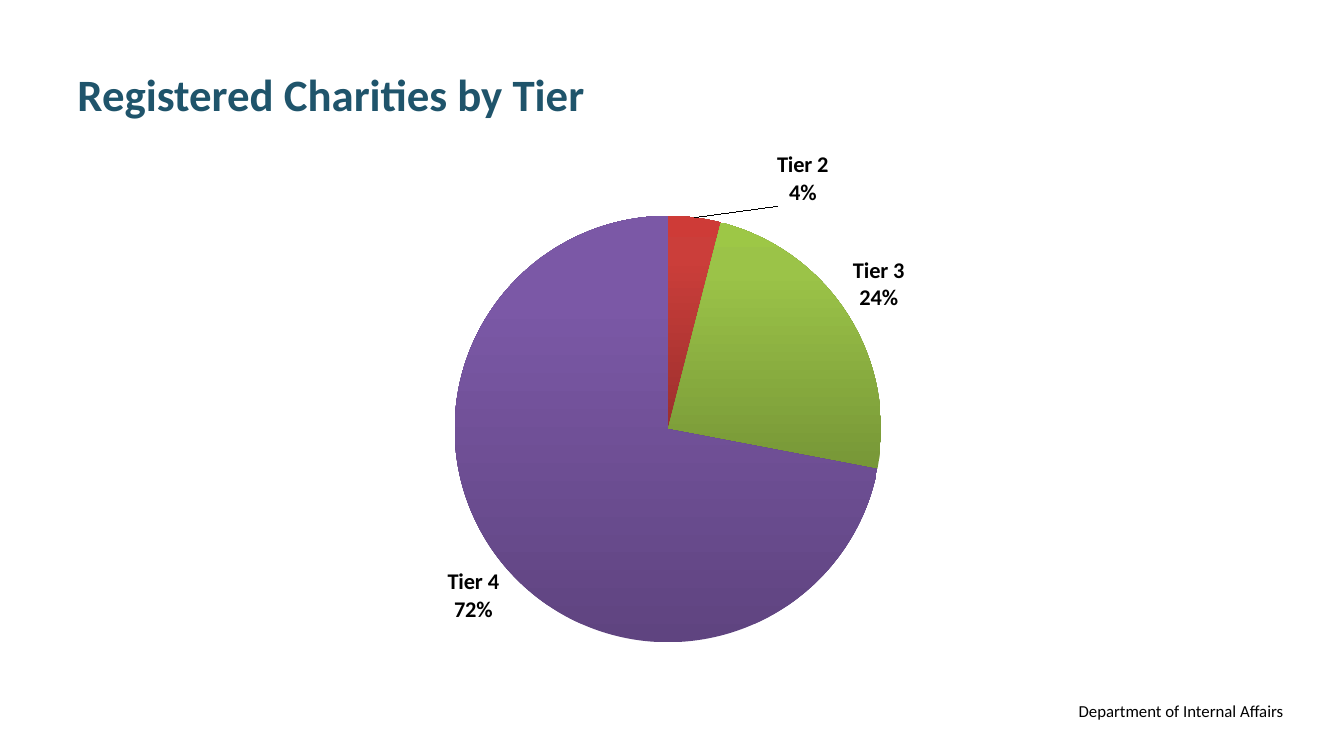
from copy import deepcopy

from pptx import Presentation
from pptx.chart.data import CategoryChartData
from pptx.dml.color import RGBColor
from pptx.enum.chart import XL_CHART_TYPE, XL_LABEL_POSITION
from pptx.enum.text import MSO_ANCHOR, PP_ALIGN
from pptx.oxml import parse_xml
from pptx.oxml.ns import nsdecls
from pptx.util import Inches, Pt

PIE = XL_CHART_TYPE.PIE
OUTSIDE_END = XL_LABEL_POSITION.OUTSIDE_END
MIDDLE = MSO_ANCHOR.MIDDLE
LEFT, RIGHT = PP_ALIGN.LEFT, PP_ALIGN.RIGHT
FONT = "Calibri"


def color(value):
    return RGBColor.from_string(value)


def chart_layout(**values):
    items = "".join(f'<c:{k} val="{v}"/>' for k, v in values.items())
    return parse_xml(f'<c:layout {nsdecls("c")}><c:manualLayout>{items}'
                     '</c:manualLayout></c:layout>')


prs = Presentation()
prs.slide_width, prs.slide_height = Inches(13.33), Inches(7.5)
s = prs.slides.add_slide(prs.slide_layouts[6])

# Title and footer
texts = [
    ("Registered Charities by Tier", (0.67, 0.3, 12, 1.25), LEFT, MIDDLE,
     {"size": Pt(32), "bold": True}, "1F546B"),
    ("Department of Internal Affairs", (8.42, 6.9, 4.41, 0.4), RIGHT, MSO_ANCHOR.TOP,
     {"size": Pt(12)}, "000000"),
]
for text, box, align, anchor, style, ink in texts:
    tf = s.shapes.add_textbox(*map(Inches, box)).text_frame
    tf.word_wrap = True
    tf.vertical_anchor = anchor
    p = tf.paragraphs[0]
    p.alignment = align
    r = p.add_run()
    r.text = text
    r.font.name = FONT
    r.font.color.rgb = color(ink)
    for name, value in style.items():
        setattr(r.font, name, value)

# Pie chart
data = CategoryChartData()
data.categories = ["Tier 1", "Tier 2", "Tier 3", "Tier 4"]
data.add_series("Series 1", [0, 4, 24, 72])
box = map(Inches, (2.17, 1.39, 9, 5.31))
chart = s.shapes.add_chart(PIE, *box, data).chart
chart.has_legend = False
chart.has_title = False
chart.font.name = FONT
chart.font.size = Pt(10)
chart.font.color.rgb = color("000000")
plot = chart.plots[0]
plot.vary_by_categories = True
series = plot.series[0]

# Pie circle within the chart frame
area = chart._chartSpace.chart.plotArea
for old in area.findall("c:layout", area.nsmap):
    area.remove(old)
area.insert(0, chart_layout(layoutTarget="inner", xMode="edge", yMode="edge",
                            x=0.26, y=0.14, w=0.47, h=0.8))

# Slice gradients, dark at the bottom
gradients = [
    ("2F5F99", "3D7CC7", "3A7CCB"),
    ("9C2F2D", "CB3E3A", "CE3B37"),
    ("779737", "9BC348", "9DC746"),
    ("5F4480", "7B58A6", "7C57A8"),
]
for i, shades in enumerate(gradients):
    fill = series.points[i].format.fill
    fill.gradient()
    fill.gradient_angle = 90
    stops = chart._chartSpace.xpath(".//a:gsLst")[i]
    stops.append(deepcopy(stops[-1]))
    for stop, position, shade in zip(fill.gradient_stops, (0, 0.8, 1), shades):
        stop.position = position
        stop.color.rgb = color(shade)

# Labels: category above percentage
labels = series.data_labels
settings = {"show_value": False, "show_category_name": True, "show_percentage": True,
            "number_format": "0%", "number_format_is_linked": False,
            "position": OUTSIDE_END}
for name, value in settings.items():
    setattr(labels, name, value)
for name, value in {"name": FONT, "size": Pt(16), "bold": True}.items():
    setattr(labels.font, name, value)
labels.font.color.rgb = color("000000")
d_lbls = labels._element
separator = parse_xml(f'<c:separator {nsdecls("c")}>\n</c:separator>')
d_lbls.xpath("c:showBubbleSize|c:showPercent")[-1].addnext(separator)

# Labels of the two small slices are moved aside, with leader lines
shared = [e for e in d_lbls if not e.tag.endswith("eaderLines")]
for i, (dx, dy) in enumerate([(-0.17, 0), (0.09, -0.01)]):
    d_lbl = parse_xml(f'<c:dLbl {nsdecls("c")}><c:idx val="{i}"/></c:dLbl>')
    d_lbl.append(chart_layout(x=dx, y=dy))
    d_lbl.extend(deepcopy(e) for e in shared)
    d_lbls.insert(i, d_lbl)

prs.save("out.pptx")
